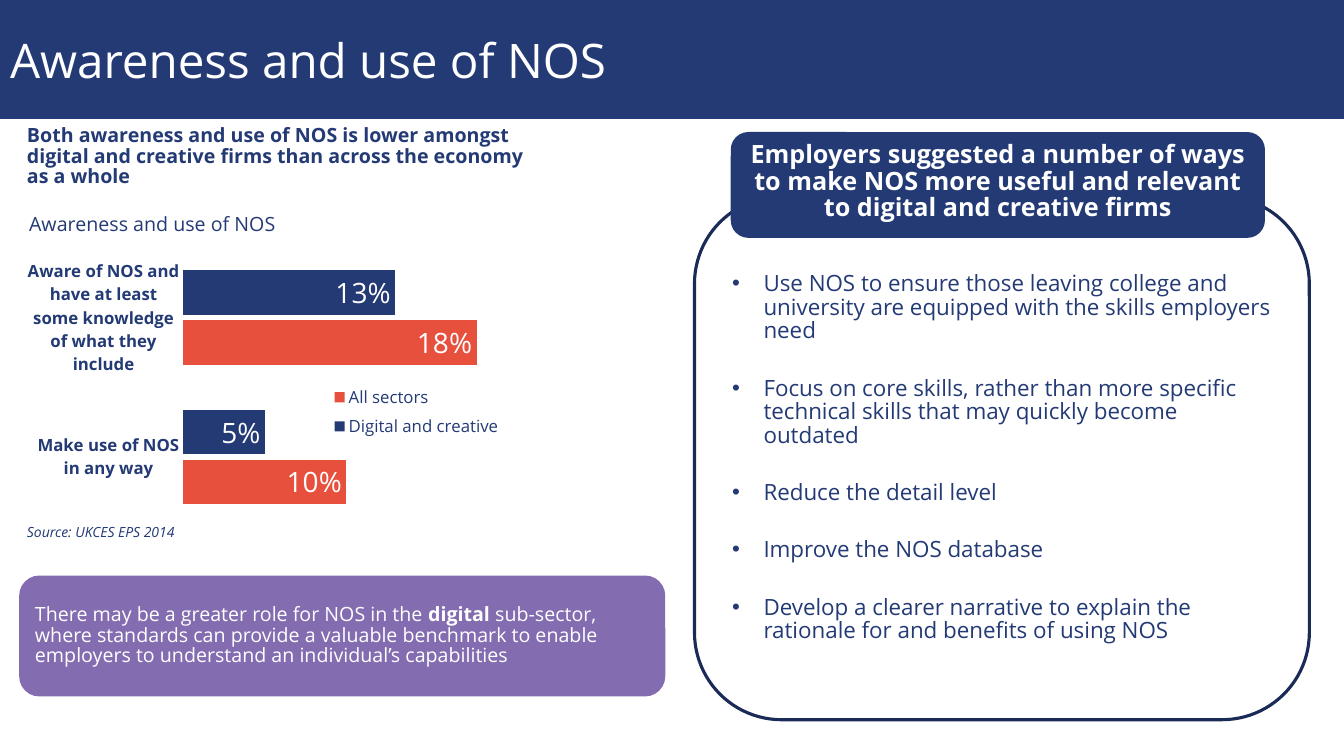
from dataclasses import dataclass
from typing import Optional

from lxml import etree
from pptx import Presentation
from pptx import util as u
from pptx.chart import data
from pptx.dml.color import RGBColor
from pptx.enum import chart as kinds
from pptx.enum import shapes, text
from pptx.oxml import ns

NAVY = RGBColor(0x23, 0x3A, 0x75)
DARK_NAVY = RGBColor(0x1A, 0x2B, 0x57)
CORAL = RGBColor(0xE8, 0x50, 0x3E)
PURPLE = RGBColor(0x83, 0x6D, 0xB0)
WHITE = RGBColor(0xFF, 0xFF, 0xFF)
FONT = "Open Sans"
LINE_SPACING = 0.88


@dataclass
class Area:
    left: float
    top: float
    width: float
    height: float

    def lengths(self) -> tuple:
        return tuple(u.Pt(n) for n in (self.left, self.top, self.width, self.height))


@dataclass
class Caption:
    area: Area
    words: str
    size: float
    bold: bool = False
    italic: bool = False


@dataclass
class Panel:
    area: Area
    fill: Optional[RGBColor] = None
    line: Optional[RGBColor] = None
    spans: tuple = ()
    size: float = 14
    bold: bool = False
    centred: bool = False
    space_after: float = 0


@dataclass
class Sector:
    name: str
    shares: tuple
    color: RGBColor


TITLE_AREA = Area(0, 0, 960, 85)
BULLET_AREA = Area(514.3, 158.6, 402.8, 337.2)
CHART_AREA = Area(19.4, 173.5, 347.8, 208.1)
PLOT_LAYOUT = (0.321, 0.018, 0.669, 0.956)
LEGEND_LAYOUT = (0.62, 0.47, 0.36, 0.22)

CAPTIONS = (
    Caption(Area(12.2, 86.4, 371.5, 58.3),
            "Both awareness and use of NOS is lower amongst digital and creative "
            "firms than across the economy as a whole", 14, bold=True),
    Caption(Area(13.7, 149.8, 344.2, 24.5), "Awareness and use of NOS", 14),
    Caption(Area(12.2, 372.2, 134.6, 19.4), "Source: UKCES EPS 2014", 10, italic=True),
)

# Spans alternate between plain and bold
PANELS = (
    Panel(Area(13.7, 411.1, 461.5, 86.4), fill=PURPLE, space_after=6,
          spans=("There may be a greater role for NOS in the ", "digital",
                 " sub-sector, where standards can provide a valuable benchmark to "
                 "enable employers to understand an individual’s capabilities")),
    Panel(Area(496.1, 140.4, 439.2, 373.7), line=DARK_NAVY),
    Panel(Area(522, 94.3, 381.6, 75.6), fill=NAVY, size=18, bold=True, centred=True,
          spans=("Employers suggested a number of ways to make NOS more useful and "
                 "relevant to digital and creative firms",)),
)

SUGGESTIONS = (
    "Use NOS to ensure those leaving college and university are equipped with the "
    "skills employers need",
    "Focus on core skills, rather than more specific technical skills that may "
    "quickly become outdated",
    "Reduce the detail level",
    "Improve the NOS database",
    "Develop a clearer narrative to explain the rationale for and benefits of using NOS",
)

QUESTIONS = ("Aware of NOS and have at least some knowledge of what they include",
             "Make use of NOS in any way")
SECTORS = (Sector("Digital and creative", (0.13, 0.05), NAVY),
           Sector("All sectors", (0.18, 0.10), CORAL))


def style(font, size: float, color: RGBColor, bold: bool = False,
          italic: bool = False) -> None:
    font.name, font.size = FONT, u.Pt(size)
    font.bold, font.italic = bold, italic
    font.color.rgb = color


def place(box, area: Area) -> None:
    box.left, box.top, box.width, box.height = area.lengths()


def fill_title(box) -> None:
    place(box, TITLE_AREA)
    box.fill.solid()
    box.fill.fore_color.rgb = NAVY
    frame = box.text_frame
    frame.text = "Awareness and use of NOS"
    frame.vertical_anchor = text.MSO_ANCHOR.MIDDLE
    para = frame.paragraphs[0]
    para.alignment = text.PP_ALIGN.LEFT
    style(para.runs[0].font, 34, WHITE)


def fill_suggestions(box) -> None:
    place(box, BULLET_AREA)
    frame = box.text_frame
    frame.text = "\n".join(SUGGESTIONS)
    frame.auto_size = text.MSO_AUTO_SIZE.NONE
    frame.vertical_anchor = text.MSO_ANCHOR.MIDDLE
    frame.margin_left = frame.margin_right = u.Pt(8.6)
    frame.margin_top = frame.margin_bottom = u.Pt(8.6)
    for para in frame.paragraphs:
        para.line_spacing = LINE_SPACING
        para.space_before, para.space_after = u.Pt(0), u.Pt(24)
        properties = para._p.get_or_add_pPr()
        properties.set("marL", str(u.Pt(22.5)))
        properties.set("indent", str(-u.Pt(22.5)))
        style(para.runs[0].font, 16, NAVY)
    frame.paragraphs[-1].space_after = u.Pt(18)


def add_caption(page, caption: Caption) -> None:
    frame = page.shapes.add_textbox(*caption.area.lengths()).text_frame
    frame.word_wrap = True
    frame.text = caption.words
    para = frame.paragraphs[0]
    para.line_spacing = LINE_SPACING
    style(para.runs[0].font, caption.size, NAVY, caption.bold, caption.italic)


def add_panel(page, panel: Panel) -> None:
    box = page.shapes.add_shape(shapes.MSO_SHAPE.ROUNDED_RECTANGLE, *panel.area.lengths())
    box.shadow.inherit = False
    if panel.fill is None:
        box.fill.background()
    else:
        box.fill.solid()
        box.fill.fore_color.rgb = panel.fill
    if panel.line is None:
        box.line.fill.background()
    else:
        box.line.color.rgb = panel.line
        box.line.width = u.Pt(2.25)
    frame = box.text_frame
    frame.word_wrap = True
    frame.vertical_anchor = text.MSO_ANCHOR.TOP if panel.centred else text.MSO_ANCHOR.MIDDLE
    para = frame.paragraphs[0]
    para.alignment = text.PP_ALIGN.CENTER if panel.centred else text.PP_ALIGN.LEFT
    para.line_spacing = LINE_SPACING
    para.space_after = u.Pt(panel.space_after)
    for index, words in enumerate(panel.spans):
        span = para.add_run()
        span.text = words
        style(span.font, panel.size, WHITE, panel.bold or index % 2 == 1)


def set_layout(parent, index: int, fractions: tuple, inner: bool = False) -> None:
    """Position a chart part by fractions of the chart's size."""
    for old in parent.findall(ns.qn("c:layout")):
        parent.remove(old)
    layout = etree.Element(ns.qn("c:layout"))
    manual = etree.SubElement(layout, ns.qn("c:manualLayout"))
    settings = [("layoutTarget", "inner")] if inner else []
    settings += [("xMode", "edge"), ("yMode", "edge")]
    settings += list(zip("xywh", fractions))
    for tag, value in settings:
        etree.SubElement(manual, ns.qn(f"c:{tag}")).set("val", str(value))
    parent.insert(index, layout)


def add_awareness_chart(page) -> None:
    figures = data.CategoryChartData(number_format="0%")
    figures.categories = QUESTIONS
    for sector in SECTORS:
        figures.add_series(sector.name, sector.shares)
    chart = page.shapes.add_chart(kinds.XL_CHART_TYPE.BAR_CLUSTERED,
                                  *CHART_AREA.lengths(), figures).chart
    chart.has_title = False
    style(chart.font, 12, NAVY)

    # Bars and their labels
    plot = chart.plots[0]
    plot.gap_width, plot.overlap, plot.vary_by_categories = 100, -12, False
    for series, sector in zip(plot.series, SECTORS):
        series.format.fill.solid()
        series.format.fill.fore_color.rgb = sector.color
        labels = series.data_labels
        labels.show_value = True
        labels.number_format, labels.number_format_is_linked = "0%", False
        labels.position = kinds.XL_LABEL_POSITION.INSIDE_END
        style(labels.font, 20, WHITE)

    # Axes
    for axis in (chart.category_axis, chart.value_axis):
        axis.has_major_gridlines = False
        axis.major_tick_mark = kinds.XL_TICK_MARK.NONE
        axis.format.line.fill.background()
    chart.category_axis.reverse_order = True
    style(chart.category_axis.tick_labels.font, 12, NAVY, bold=True)
    chart.value_axis.minimum_scale, chart.value_axis.maximum_scale = 0, 0.2
    chart.value_axis.tick_label_position = kinds.XL_TICK_LABEL_POSITION.NONE

    # Legend and plot positions
    chart.has_legend = True
    chart.legend.position = kinds.XL_LEGEND_POSITION.RIGHT
    chart.legend.include_in_layout = False
    style(chart.legend.font, 12, NAVY)
    set_layout(chart.legend._element, 1, LEGEND_LAYOUT)
    set_layout(chart._chartSpace.chart.plotArea, 0, PLOT_LAYOUT, inner=True)


def main() -> None:
    deck = Presentation()
    deck.slide_width, deck.slide_height = u.Pt(960), u.Pt(540)
    page = deck.slides.add_slide(deck.slide_layouts[1])
    fill_title(page.shapes.title)
    fill_suggestions(page.placeholders[1])
    add_awareness_chart(page)
    for caption in CAPTIONS:
        add_caption(page, caption)
    for panel in PANELS:
        add_panel(page, panel)
    deck.save("out.pptx")


if __name__ == "__main__":
    main()
